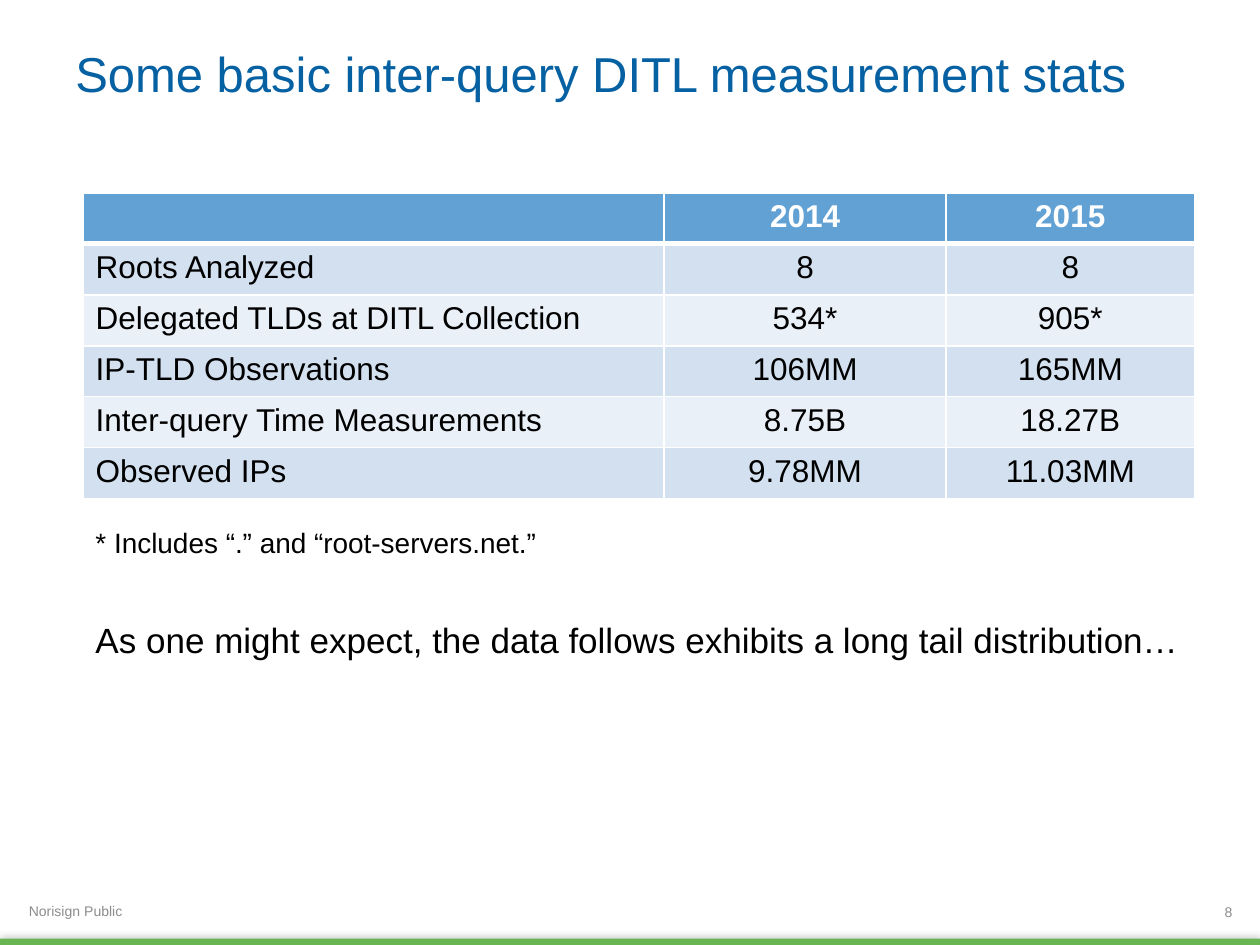
from lxml.etree import SubElement
from pptx import Presentation
from pptx.dml.color import RGBColor
from pptx.enum.shapes import MSO_SHAPE
from pptx.enum.text import MSO_ANCHOR, PP_ALIGN
from pptx.oxml.ns import qn
from pptx.util import Inches, Pt

FONT = "Arial"
BLACK, WHITE, GRAY = "000000", "FFFFFF", "8C8C8C"
TITLE_BLUE, HEADER_BLUE, GREEN = "0661A3", "61A1D4", "69B453"
BANDS = ("D2E0EF", "EAF0F7")

# text, (left, top, width, height), size, colour, anchor, alignment
TEXTS = [
    ("Norisign Public", (0.13, 7.13, 3.32, 0.2), 8, GRAY, MSO_ANCHOR.MIDDLE, PP_ALIGN.LEFT),
    ("Some basic inter-query DITL measurement stats", (0.5, 0.27, 9, 0.61), 28, TITLE_BLUE,
     MSO_ANCHOR.MIDDLE, PP_ALIGN.LEFT),
    ("8", (9.49, 7.15, 0.39, 0.17), 8, GRAY, MSO_ANCHOR.MIDDLE, PP_ALIGN.RIGHT),
    ("As one might expect, the data follows exhibits a long tail distribution…",
     (0.66, 4.86, 8.84, 0.44), 20, BLACK, MSO_ANCHOR.TOP, PP_ALIGN.LEFT),
    ("* Includes “.” and “root-servers.net.”", (0.66, 4.12, 8.84, 0.37), 16, BLACK,
     MSO_ANCHOR.TOP, PP_ALIGN.LEFT),
]

STATS = [
    ("", "2014", "2015"),
    ("Roots Analyzed", "8", "8"),
    ("Delegated TLDs at DITL Collection", "534*", "905*"),
    ("IP-TLD Observations", "106MM", "165MM"),
    ("Inter-query Time Measurements", "8.75B", "18.27B"),
    ("Observed IPs", "9.78MM", "11.03MM"),
]
COLUMN_WIDTHS = (4.61, 2.24, 1.97)
ROW_HEIGHT = 0.405


def color(value):
    return RGBColor.from_string(value)


def style(paragraph, size, text_color, alignment, bold=False):
    paragraph.alignment = alignment
    font = paragraph.font
    font.name, font.size, font.bold = FONT, Pt(size), bold
    font.color.rgb = color(text_color)


def add_text(slide, text, box, size, text_color, anchor, alignment):
    frame = slide.shapes.add_textbox(*map(Inches, box)).text_frame
    frame.word_wrap = True
    frame.vertical_anchor = anchor
    frame.text = text
    style(frame.paragraphs[0], size, text_color, alignment)


def add_footer_bar(slide):
    bar = slide.shapes.add_shape(
        MSO_SHAPE.RECTANGLE, *map(Inches, (0, 7.45, 10, 0.05)))
    bar.fill.solid()
    bar.fill.fore_color.rgb = color(GREEN)
    bar.line.fill.background()
    bar.shadow.inherit = False
    effects = bar._element.spPr.find(qn("a:effectLst"))
    shadow = SubElement(effects, qn("a:outerShdw"), blurRad=str(Pt(5)), dist="0", dir="0")
    shadow_color = SubElement(shadow, qn("a:srgbClr"), val=BLACK)
    SubElement(shadow_color, qn("a:alpha"), val="40000")


def set_borders(cell, top, bottom):
    properties = cell._tc.get_or_add_tcPr()
    for tag, width in (("a:lnL", 1), ("a:lnR", 1), ("a:lnT", top), ("a:lnB", bottom)):
        line = SubElement(properties, qn(tag), w=str(Pt(width)))
        fill = SubElement(line, qn("a:solidFill"))
        SubElement(fill, qn("a:srgbClr"), val=WHITE)


def add_stats_table(slide):
    table = slide.shapes.add_table(
        len(STATS), len(COLUMN_WIDTHS), Inches(0.66), Inches(1.53),
        Inches(sum(COLUMN_WIDTHS)), Inches(ROW_HEIGHT * len(STATS))).table
    for column, width in zip(table.columns, COLUMN_WIDTHS):
        column.width = Inches(width)
    for row_index, values in enumerate(STATS):
        table.rows[row_index].height = Inches(ROW_HEIGHT)
        header = row_index == 0
        for column_index, value in enumerate(values):
            cell = table.cell(row_index, column_index)
            set_borders(cell, top=3 if row_index == 1 else 1, bottom=3 if header else 1)
            cell.fill.solid()
            cell.fill.fore_color.rgb = color(
                HEADER_BLUE if header else BANDS[(row_index - 1) % 2])
            cell.text = value
            style(cell.text_frame.paragraphs[0], 18, WHITE if header else BLACK,
                  PP_ALIGN.CENTER if column_index else PP_ALIGN.LEFT, bold=header)


def main():
    presentation = Presentation()
    presentation.slide_width, presentation.slide_height = Inches(10), Inches(7.5)
    slide = presentation.slides.add_slide(presentation.slide_layouts[6])
    add_footer_bar(slide)
    for item in TEXTS:
        add_text(slide, *item)
    add_stats_table(slide)
    presentation.save("out.pptx")


if __name__ == "__main__":
    main()
